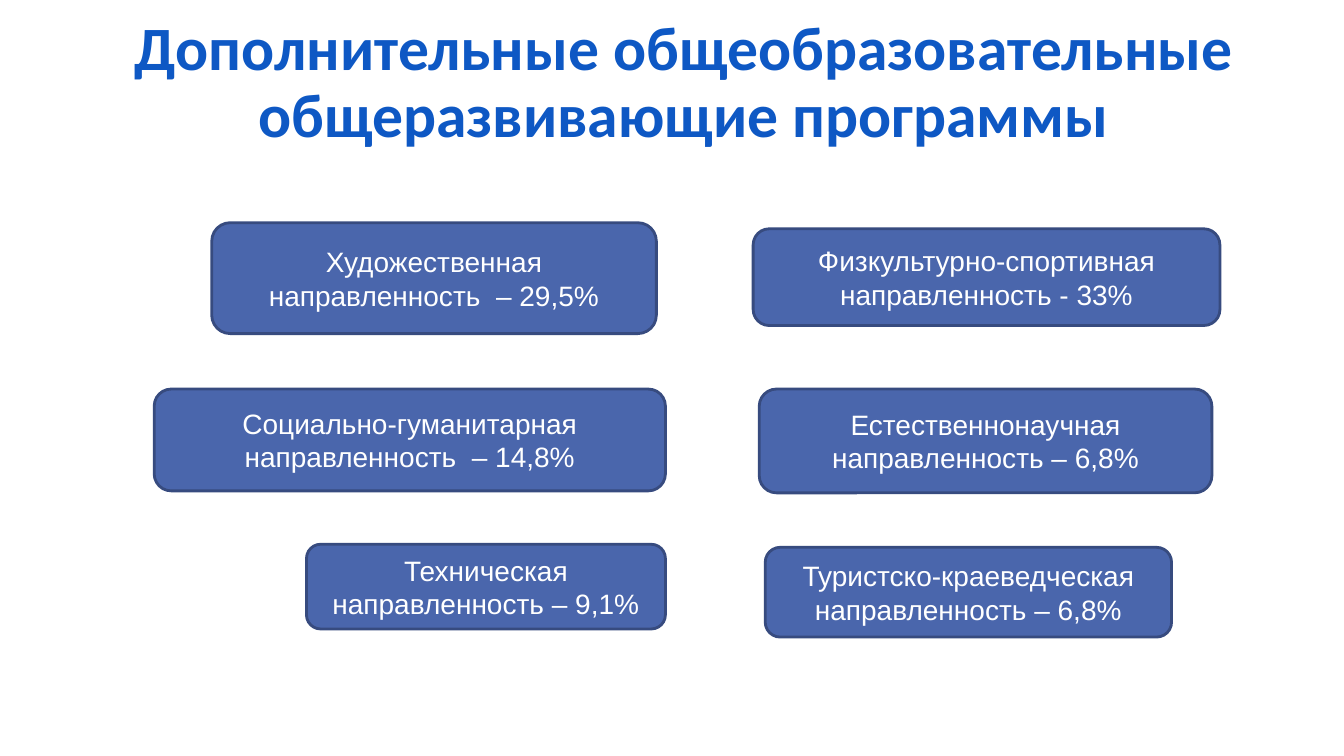
from pptx import Presentation
from pptx.dml.color import RGBColor
from pptx.enum.shapes import MSO_SHAPE
from pptx.enum.text import MSO_ANCHOR, PP_ALIGN
from pptx.util import Inches, Pt

TITLE = "Дополнительные общеобразовательные общеразвивающие программы"
CARDS = [
    ("Художественная направленность  – 29,5%", 2.1, 2.21, 4.41, 1.1),
    ("Физкультурно-спортивная направленность - 33%", 7.47, 2.27, 4.63, 0.96),
    ("Социально-гуманитарная направленность  – 14,8%", 1.53, 3.86, 5.07, 1.01),
    ("Естественнонаучная направленность – 6,8%", 7.53, 3.86, 4.49, 1.03),
    ("Техническая направленность – 9,1%", 3.04, 5.4, 3.56, 0.84),
    ("Туристско-краеведческая направленность – 6,8%", 7.59, 5.43, 4.03, 0.89),
]


def color(code):
    return RGBColor.from_string(code)


def write(shape, text, font, size, code, bold=False):
    frame = shape.text_frame
    frame.word_wrap = True
    frame.vertical_anchor = MSO_ANCHOR.MIDDLE
    line = frame.paragraphs[0]
    line.text = text
    line.alignment = PP_ALIGN.CENTER
    line.font.name = font
    line.font.size = Pt(size)
    line.font.bold = bold
    line.font.color.rgb = color(code)
    return line


def add_card(slide, text, *box):
    card = slide.shapes.add_shape(MSO_SHAPE.ROUNDED_RECTANGLE, *map(Inches, box))
    card.shadow.inherit = False
    card.fill.solid()
    card.fill.fore_color.rgb = color("4A66AC")
    card.line.color.rgb = color("374B7F")
    card.line.width = Pt(2)
    write(card, text, "Arial", 20, "FFFFFF")


def main():
    deck = Presentation()
    deck.slide_width, deck.slide_height = Inches(13.33), Inches(7.5)
    slide = deck.slides.add_slide(deck.slide_layouts[6])
    title = slide.shapes.add_textbox(*map(Inches, (0.51, 0.21, 12.55, 1.25)))
    write(title, TITLE, "Calibri", 44, "0E58C4", True).line_spacing = 0.9
    for card in CARDS:
        add_card(slide, *card)
    deck.save("out.pptx")


if __name__ == "__main__":
    main()
